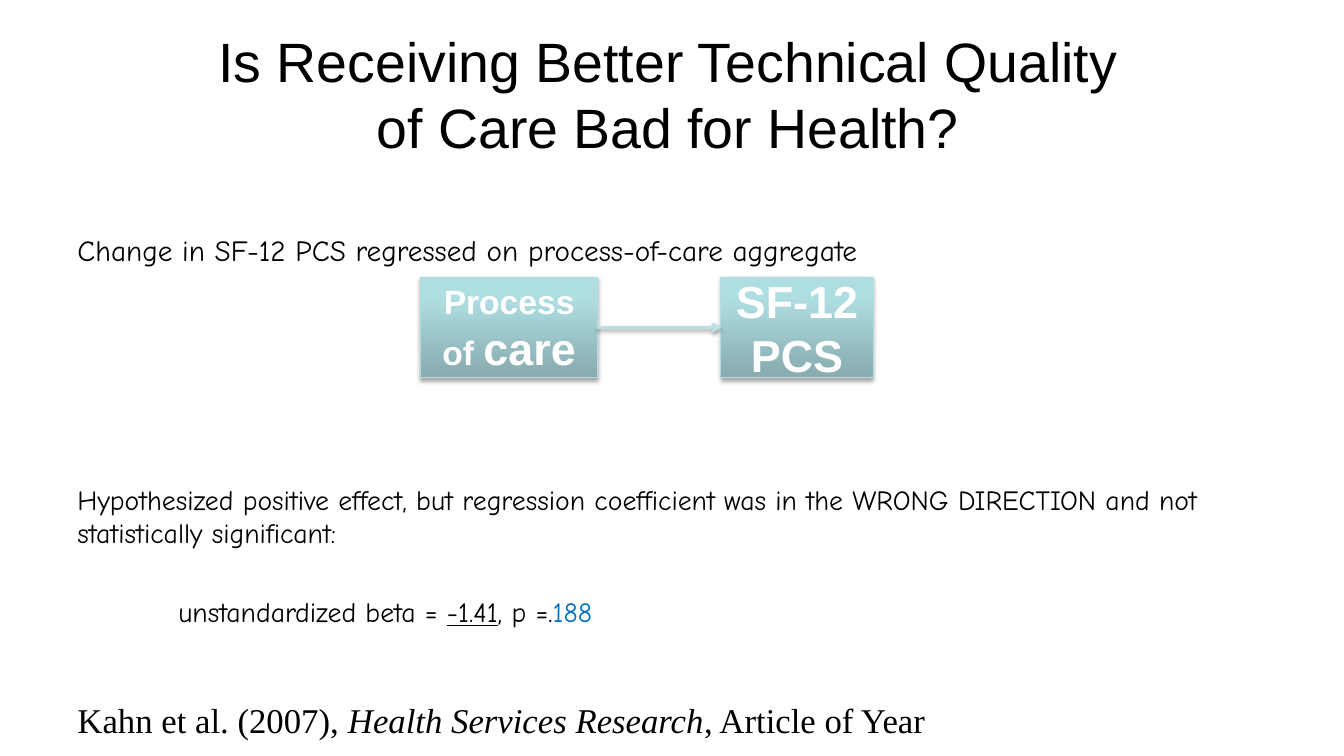
from copy import deepcopy
from dataclasses import dataclass, field

from lxml.etree import SubElement as Sub
from pptx import Presentation
from pptx.dml.color import RGBColor
from pptx.enum.shapes import MSO_CONNECTOR as Link, MSO_SHAPE as Form
from pptx.enum.text import MSO_ANCHOR as Anchor, MSO_AUTO_SIZE as Fit, PP_ALIGN as Align
from pptx.oxml.ns import qn
from pptx.util import Inches, Pt

COMIC, TIMES, SANS = "Comic Neue", "Times New Roman", "Arial"
STOPS = [(0, "87ABAE"), (0.8, "AFDEE2"), (1, "AFE0E4")]


@dataclass
class Span:
    text: str
    size: float
    font: str = COMIC
    color: str = "000000"
    bold: bool = False
    italic: bool = False
    under: bool = False


@dataclass
class Para:
    spans: list[Span]
    gap: float = 0
    indent: float = 0
    align: Align = Align.LEFT


@dataclass
class Box:
    left: float
    width: float
    paras: list[Para] = field(default_factory=list)


def rgb(code: str) -> RGBColor:
    return RGBColor.from_string(code)


def write(frame, paras: list[Para]) -> None:
    frame.word_wrap = True
    frame.auto_size = Fit.NONE
    for num, item in enumerate(paras):
        para = frame.add_paragraph() if num else frame.paragraphs[0]
        para.alignment = item.align
        para.space_before = Pt(item.gap)
        if item.indent:
            props = para._p.get_or_add_pPr()
            props.set("marL", str(Inches(item.indent)))
            props.set("indent", "0")
        for span in item.spans:
            run = para.add_run()
            run.text = span.text
            font = run.font
            font.name, font.size = span.font, Pt(span.size)
            font.bold, font.italic, font.underline = span.bold, span.italic, span.under
            font.color.rgb = rgb(span.color)


def shade(props, alpha: int, dist: float) -> None:
    effects = props.find(qn("a:effectLst"))
    if effects is None:
        effects = Sub(props, qn("a:effectLst"))
    glow = Sub(effects, qn("a:outerShdw"), blurRad=str(Pt(3.1)),
               dist=str(Pt(dist)), dir="5400000", rotWithShape="0")
    tone = Sub(glow, qn("a:srgbClr"), val="000000")
    Sub(tone, qn("a:alpha"), val=str(alpha * 1000))


def draw(slide, box: Box) -> None:
    shape = slide.shapes.add_shape(
        Form.RECTANGLE, Inches(box.left), Inches(2.75), Inches(box.width), Inches(1))
    shape.fill.gradient()
    shape.fill.gradient_angle = 90
    props = shape._element.spPr
    ramp = props.find(".//" + qn("a:gsLst"))
    ramp.append(deepcopy(ramp[-1]))
    for stop, (place, code) in zip(shape.fill.gradient_stops, STOPS):
        stop.position = place
        stop.color.rgb = rgb(code)
    shape.line.color.rgb = rgb("B6DCDF")
    shape.line.width = Pt(0.75)
    shape.shadow.inherit = False
    shade(props, 35, 1.8)
    shape.text_frame.vertical_anchor = Anchor.MIDDLE
    write(shape.text_frame, box.paras)


def join(slide, start: float, end: float) -> None:
    arrow = slide.shapes.add_connector(
        Link.STRAIGHT, Inches(start), Inches(3.25), Inches(end), Inches(3.25))
    arrow.line.color.rgb = rgb("BBE0E3")
    arrow.line.width = Pt(2)
    Sub(arrow.line._get_or_add_ln(), qn("a:tailEnd"), type="arrow")
    shade(arrow._element.spPr, 38, 1.6)


def label(text: str, size: float) -> Span:
    return Span(text, size, SANS, "FFFFFF", bold=True)


TITLE = [Para([Span("Is Receiving Better Technical Quality of Care Bad for Health?",
                    39.6, SANS)], align=Align.CENTER)]
BODY = [
    Para([Span("Change in SF-12 PCS regressed on process-of-care aggregate", 20.9)], gap=4),
    Para([Span("Hypothesized positive effect, but regression coefficient was in the "
               "WRONG DIRECTION and not statistically significant:", 19.8)], gap=154),
    Para([Span("unstandardized beta = ", 19.8), Span("-1.41", 19.8, under=True),
          Span(", p =.", 19.8), Span("188", 19.8, color="0070C0")], gap=32.5, indent=1),
    Para([Span("Kahn et al. (2007), ", 24.8, TIMES),
          Span("Health Services Research", 24.8, TIMES, italic=True),
          Span(", Article of Year", 24.8, TIMES)], gap=51),
]
BOXES = [
    Box(7.15, 1.51, [Para([label("SF-12 PCS", 32)], align=Align.CENTER)]),
    Box(4.17, 1.76, [Para([label("Process", 24)], align=Align.CENTER),
                     Para([label("of ", 24), label("care", 32)], align=Align.CENTER)]),
]


def main() -> None:
    """Build the slide on quality of care and health."""
    deck = Presentation()
    deck.slide_width, deck.slide_height = Inches(13.33), Inches(7.5)
    slide = deck.slides.add_slide(deck.slide_layouts[5])
    title = slide.shapes.title
    title.left, title.top = Inches(1.78), Inches(0.3)
    title.width, title.height = Inches(9.69), Inches(1.25)
    title.text_frame.vertical_anchor = Anchor.MIDDLE
    write(title.text_frame, TITLE)
    body = slide.shapes.add_textbox(Inches(0.67), Inches(2.25), Inches(12.17), Inches(4.95))
    write(body.text_frame, BODY)
    for box in BOXES:
        draw(slide, box)
    join(slide, 5.92, 7.15)
    deck.save("out.pptx")


if __name__ == "__main__":
    main()
